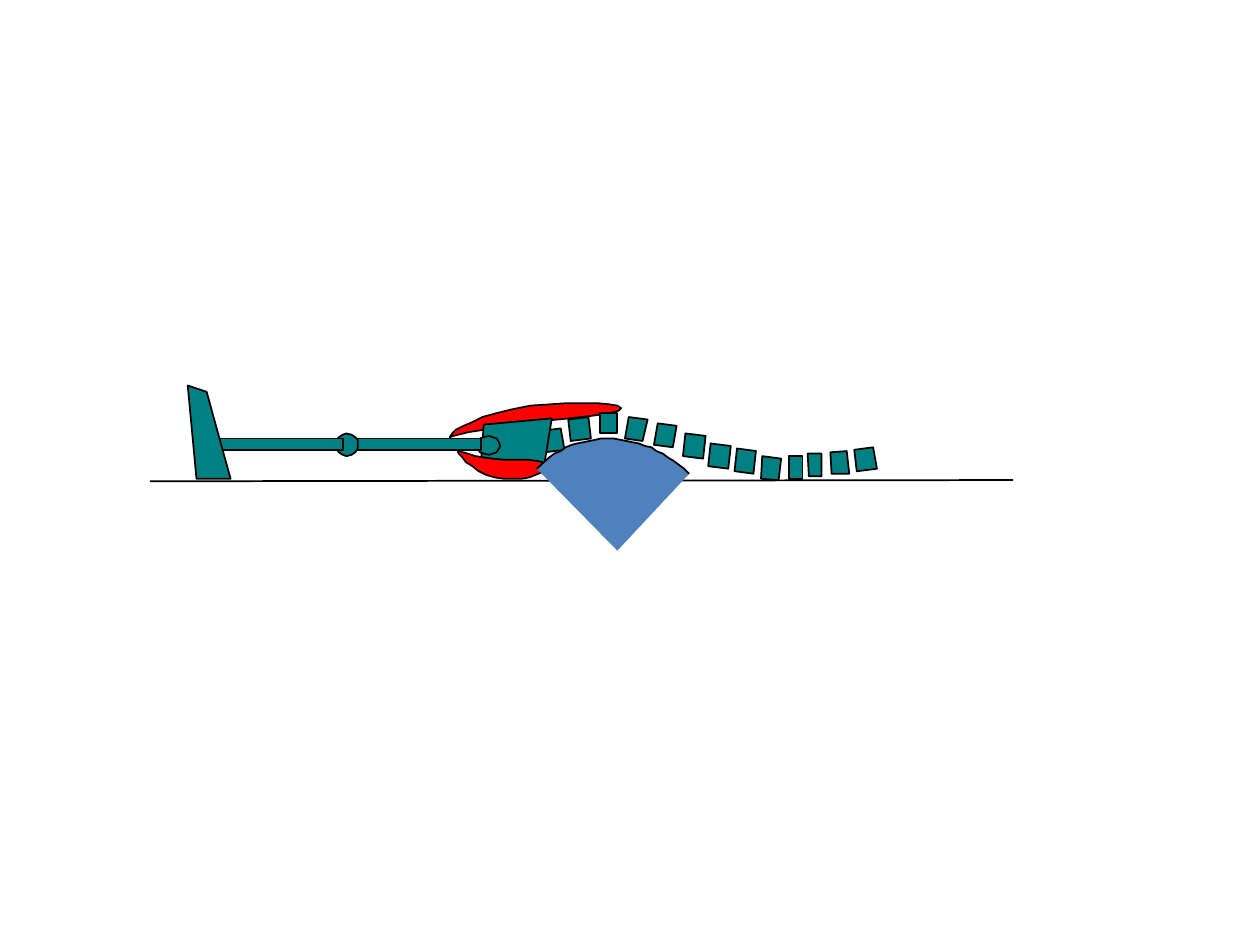
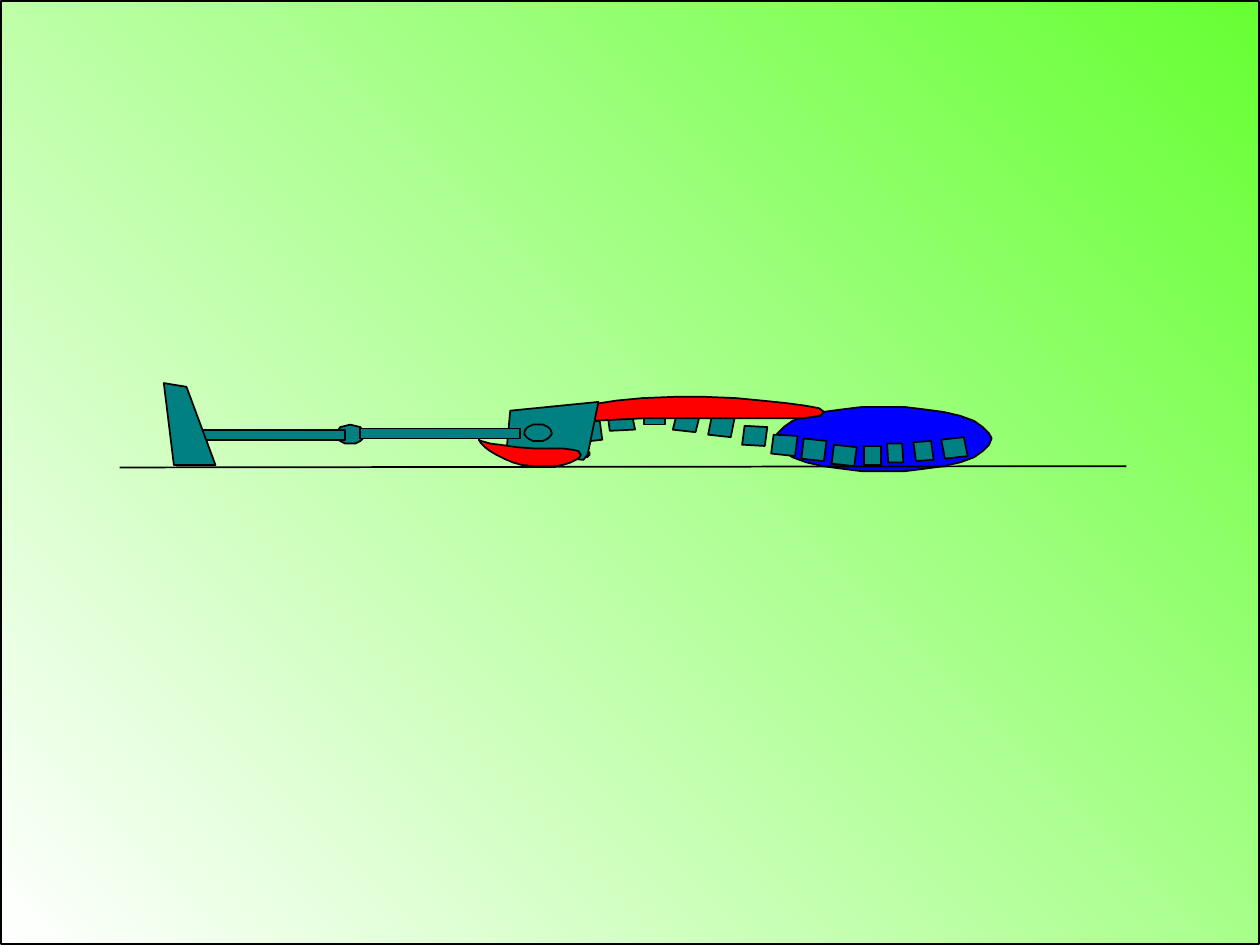
from copy import deepcopy
from dataclasses import dataclass
from math import cos, pi, sin

from lxml.etree import SubElement
from pptx import Presentation
from pptx.dml.color import RGBColor
from pptx.enum.dml import MSO_LINE
from pptx.enum.shapes import MSO_CONNECTOR, MSO_SHAPE
from pptx.oxml.ns import qn
from pptx.util import Pt

# Drawing grid: one unit is 0.72 points
UNIT = 0.72

BONE, MUSCLE, HEAD, SUPPORT = "008080", "FF0000", "0000FF", "4F81BD"
BLACK, WHITE, GREEN = "000000", "FFFFFF", "66FF33"
OUTLINE = {"width": Pt(1), "dash_style": MSO_LINE.SOLID}

Points = list[tuple[float, float]]


@dataclass
class Outline:
    points: Points
    color: str = BONE


@dataclass
class Bar:
    x: float
    y: float
    w: float
    h: float
    color: str = BONE


@dataclass
class Ground:
    x1: float
    y1: float
    x2: float
    y2: float


def grid(value: float) -> Pt:
    return Pt(value * UNIT)


def rgb(color: str) -> RGBColor:
    return RGBColor.from_string(color)


# Outlines that follow a rule
def vertebra(x: float, y: float, w: float, rise: float, lean: float, h: float) -> Outline:
    """Slanted block: the top edge runs (w, rise), the sides run (lean, h)."""
    return Outline([(x, y), (x + w, y + rise),
                    (x + w + lean, y + rise + h), (x + lean, y + h)])


def ring(x: float, y: float, w: float, h: float, color: str = BONE, sides: int = 16) -> Outline:
    angles = [2 * pi * i / sides for i in range(sides)]
    return Outline([(x + w / 2 * (1 + cos(a)), y + h / 2 * (1 - sin(a)))
                    for a in angles], color)


def bezier(p0, p1, p2, p3, steps: int = 24) -> Points:
    points = []
    for i in range(steps + 1):
        t = i / steps
        weights = (1 - t) ** 3, 3 * t * (1 - t) ** 2, 3 * t * t * (1 - t), t ** 3
        points.append(tuple(sum(w * p[axis] for w, p in zip(weights, (p0, p1, p2, p3)))
                            for axis in (0, 1)))
    return points


# Drawing
def set_outline(sp) -> None:
    for name, value in OUTLINE.items():
        setattr(sp.line, name, value)
    sp.line.color.rgb = rgb(BLACK)


def set_style(sp, color: str) -> None:
    sp.shadow.inherit = False
    sp.fill.solid()
    sp.fill.fore_color.rgb = rgb(color)
    set_outline(sp)


def draw_outline(shapes, part: Outline):
    builder = shapes.build_freeform(*part.points[0], scale=float(grid(1)))
    builder.add_line_segments(part.points[1:], close=True)
    sp = builder.convert_to_shape()
    set_style(sp, part.color)
    return sp


def draw_bar(shapes, bar: Bar):
    sp = shapes.add_shape(MSO_SHAPE.RECTANGLE, *map(grid, (bar.x, bar.y, bar.w, bar.h)))
    set_style(sp, bar.color)
    return sp


def draw_ground(shapes, ground: Ground) -> None:
    line = shapes.add_connector(MSO_CONNECTOR.STRAIGHT, *map(
        grid, (ground.x1, ground.y1, ground.x2, ground.y2)))
    set_outline(line)
    SubElement(line._element.spPr, qn("a:effectLst"))


DRAW = {Outline: draw_outline, Bar: draw_bar, Ground: draw_ground}


def draw_figure(slide, parts: list) -> None:
    group = slide.shapes.add_group_shape()
    for part in parts:
        DRAW[type(part)](group.shapes, part)


def draw_support(slide, arc: Points, apex: tuple[float, float]) -> None:
    """Filled sector whose curved edge alone carries a line."""
    sp = draw_outline(slide.shapes, Outline(arc + [apex], SUPPORT))
    sector = sp._element.find(".//" + qn("a:path"))
    edge = deepcopy(sector)
    for segment in edge[-2:]:
        edge.remove(segment)
    sector.set("stroke", "0")
    edge.set("fill", "none")
    sector.addnext(edge)


def draw_backdrop(slide) -> None:
    sp = draw_bar(slide.shapes, Bar(1, 1, 998, 748))
    sp.fill.gradient()
    sp.fill.gradient_angle = 45
    for stop, color in zip(sp.fill.gradient_stops, (WHITE, GREEN)):
        stop.color.rgb = rgb(color)


# Figure lying over a curved support
SUPPORTED = [
    # back muscle
    Outline([(360, 346), (372, 343), (385, 341), (397, 339), (409, 337), (432, 334),
             (453, 332), (470, 330), (484, 328), (491, 326), (493, 324), (490, 322),
             (484, 321), (474, 320), (463, 320), (450, 320), (436, 321), (421, 322),
             (406, 325), (394, 328), (383, 331), (375, 335), (368, 338), (362, 341),
             (359, 344), (357, 347)], MUSCLE),
    # lower spine
    vertebra(429, 342, 16, -2, 2.5, 17),
    vertebra(522, 336, 15, 2, -3, 17),
    vertebra(499, 331, 15, 2, -3.5, 17),
    vertebra(451, 333, 16, -2, 2, 17),
    Bar(476, 328, 14, 16),
    vertebra(544, 344, 16, 2, -2, 17.5),
    # pelvis, hip, thigh, knee and shin
    Outline([(430, 370), (382, 363), (384, 337), (438, 332), (432, 369), (434, 367),
             (434, 366)]),
    ring(378, 346, 19, 15),
    Bar(283, 348, 99, 9),
    ring(266, 344, 18.5, 17.5),
    Bar(173, 348, 99, 9),
    # upper spine and neck
    vertebra(564, 352, 16, 2, -1.5, 17.5),
    vertebra(659, 359, 13, -1, 1.5, 17.5),
    vertebra(585, 356, 15, 2, -2, 17.5),
    vertebra(605, 362, 15, 1.5, -1.5, 17.5),
    vertebra(625.5, 362.5, 11.5, 0, 0, 17.5),
    vertebra(641, 360, 11, 0, 0.5, 17.5),
    Ground(119, 382, 804, 381),
    vertebra(678, 357, 15, -2, 2.5, 17),
    # buttock and foot
    Outline([(364, 358), (371, 360), (377, 362), (390, 364), (401, 365), (412, 365),
             (420, 365), (427, 366), (431, 367), (433, 370), (432, 373), (430, 375),
             (425, 377), (420, 379), (414, 380), (407, 380), (400, 380), (393, 379),
             (386, 377), (380, 374), (375, 370), (370, 367), (367, 363), (364, 360),
             (363, 357)], MUSCLE),
    Outline([(156, 380), (149, 306), (164, 311), (183, 380)]),
]
SUPPORT_ARC = [(426, 372)] + bezier((436, 363), (469, 339), (516, 345), (547, 376))
SUPPORT_APEX = (490, 437)

# Figure lying flat, with its head
FLAT = [
    ring(615, 323, 172, 51, HEAD, 32),
    # lower spine
    vertebra(457, 336, 19, -2, 2.5, 15),
    vertebra(565, 330, 18, 2, -3.5, 15),
    vertebra(538, 325, 18, 2, -4, 16),
    vertebra(482, 327, 19, -1.5, 2.5, 15.5),
    Bar(511, 323, 17, 14),
    vertebra(591, 338, 18, 1, -2, 15),
    # knee and shin
    ring(267, 337, 22, 15.5),
    Bar(159, 341, 115, 8),
    # upper spine and neck
    vertebra(614, 345, 19, 1, -2, 15.5),
    vertebra(725, 351, 14, -1, 2, 15),
    vertebra(638, 348, 18, 2, -2, 15.5),
    vertebra(662, 353, 18, 2, -2.5, 15.5),
    vertebra(686, 354, 13, 0, 0, 15),
    vertebra(704, 352, 12, 0, 1, 15),
    Ground(95, 371, 894, 370),
    vertebra(747, 349, 18, -2, 2.5, 15.5),
    # back muscle
    Outline([(429, 337), (449, 335), (470, 334), (491, 333), (512, 332), (532, 332),
             (551, 332), (586, 332), (615, 332), (638, 332), (651, 330), (654, 327),
             (650, 324), (639, 322), (624, 320), (605, 318), (584, 316), (560, 315),
             (535, 315), (510, 316), (489, 318), (470, 321), (455, 324), (443, 328),
             (433, 331), (427, 335), (424, 338)], MUSCLE),
    # foot, pelvis, buttock, hip and thigh
    Outline([(138, 369), (130, 304), (148, 307), (171, 369)]),
    Outline([(463, 365), (402, 358), (405, 326), (475, 319), (466, 363), (468, 361),
             (468, 359)]),
    Outline([(382, 350), (389, 352), (397, 353), (411, 355), (425, 356), (437, 356),
             (447, 356), (455, 357), (459, 358), (461, 361), (460, 363), (457, 365),
             (453, 367), (447, 369), (440, 370), (432, 370), (423, 370), (414, 369),
             (407, 367), (400, 364), (394, 361), (389, 358), (385, 355), (382, 352),
             (380, 349)], MUSCLE),
    ring(416, 337, 22, 13),
    Bar(286, 340, 127, 8),
]


def main() -> None:
    prs = Presentation()
    prs.slide_width, prs.slide_height = Pt(720), Pt(540)
    blank = prs.slide_layouts[6]

    slide = prs.slides.add_slide(blank)
    draw_figure(slide, SUPPORTED)
    draw_support(slide, SUPPORT_ARC, SUPPORT_APEX)

    slide = prs.slides.add_slide(blank)
    draw_backdrop(slide)
    draw_figure(slide, FLAT)

    prs.save("out.pptx")


if __name__ == "__main__":
    main()
